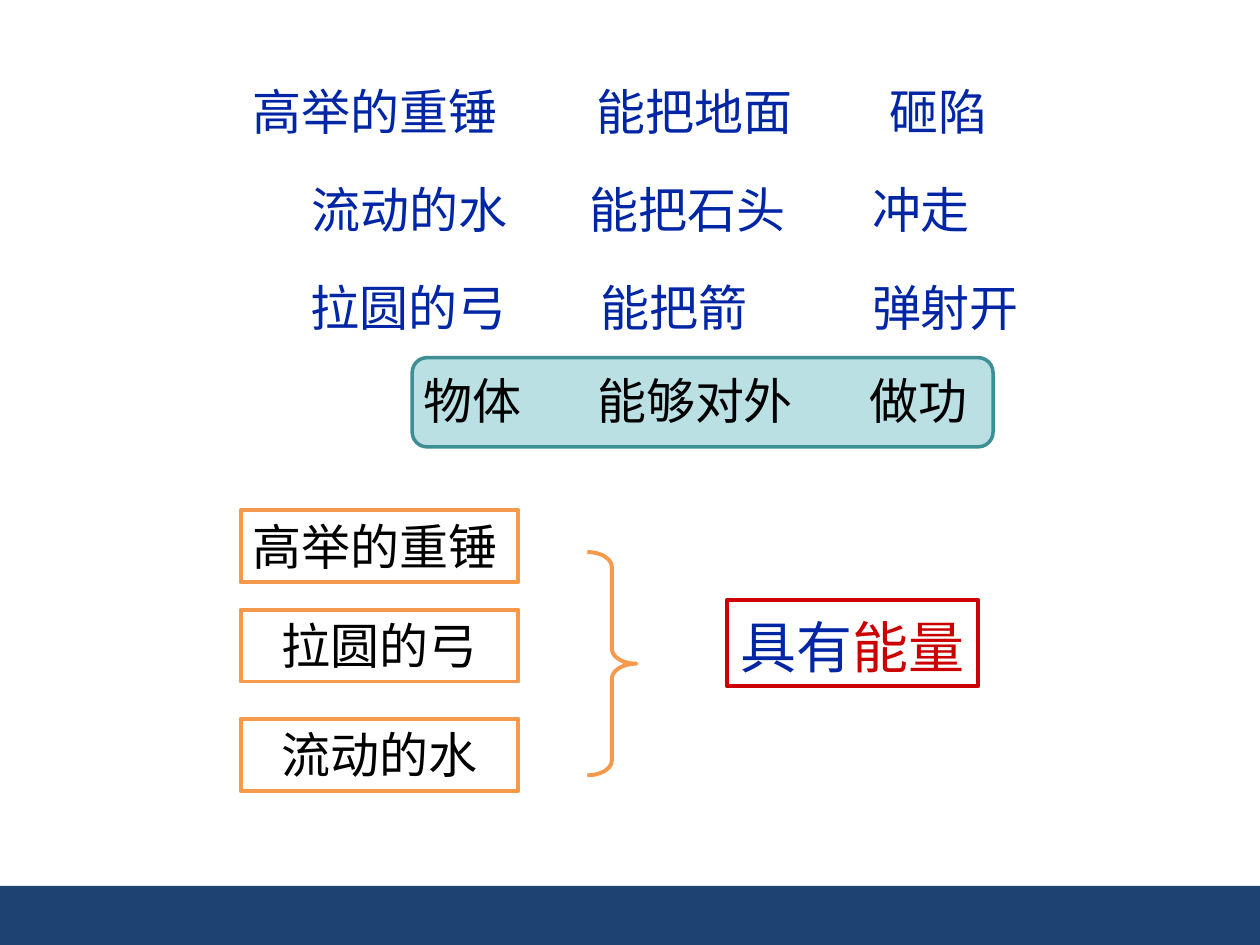
import pptx
import pptx.util
import pptx.dml.color
import pptx.enum.shapes
import pptx.enum.text
import lxml.etree

Cm = pptx.util.Cm
Pt = pptx.util.Pt
KIND = pptx.enum.shapes.MSO_SHAPE
ALIGN = pptx.enum.text.PP_ALIGN
NS = "http://schemas.openxmlformats.org/drawingml/2006/main"
BLUE, RED, ORANGE, BLACK = "0026A5", "CC0000", "F7994B", "000000"
FONT = {"name": "Times New Roman", "size": Pt(28)}
FRAME = {"word_wrap": True, "vertical_anchor": pptx.enum.text.MSO_ANCHOR.TOP}
PAD = 0.25  # inner margin of a text frame, cm


def paint(part, color):
    part.rgb = pptx.dml.color.RGBColor.from_string(color)


def format_all(item, values):
    for name, value in values.items():
        setattr(item, name, value)


def add_form(slide, kind, box, fill=None, line=None, width=2.25):
    form = slide.shapes.add_shape(kind, *map(Cm, box))
    form.shadow.inherit = False
    if fill:
        form.fill.solid()
        paint(form.fill.fore_color, fill)
    else:
        form.fill.background()
    if line:
        paint(form.line.color, line)
        form.line.width = Pt(width)
    else:
        form.line.fill.background()
    return form


def write(form, runs, **para):
    """Write (text, colour) runs as one paragraph with the given format."""
    format_all(form.text_frame, FRAME)
    line = form.text_frame.paragraphs[0]
    format_all(line, para)
    for text, color in runs:
        run = line.add_run()
        run.text = text
        format_all(run.font, FONT)
        paint(run.font.color, color)
    return line


def add_row(slide, box, words, stops, color):
    """Set words in one line, with tab stops at the given slide positions."""
    form = slide.shapes.add_textbox(*map(Cm, box))
    line = write(form, [("\t".join(words), color)])
    tabs = lxml.etree.SubElement(line._p.get_or_add_pPr(), f"{{{NS}}}tabLst")
    for stop in stops:
        pos = Cm(stop - box[0] - PAD)
        lxml.etree.SubElement(tabs, f"{{{NS}}}tab", pos=str(int(pos)), algn="l")


def add_cases(slide, left, top):
    step = 1.97
    rows = [
        (0, ("高举的重锤", "能把地面", "砸陷"), (12.02, 17.94)),
        (1.19, ("流动的水", "能把石头", "冲走"), (11.88, 17.58)),
        (1.17, ("拉圆的弓", "能把箭", "弹射开"), (12.1, 17.58)),
    ]
    for i, (dent, words, stops) in enumerate(rows):
        box = (left + dent, top + i * step, 19 - dent, 1.45)
        add_row(slide, box, words, stops, BLUE)


def add_rule(slide, left, top, width, height):
    add_form(slide, KIND.ROUNDED_RECTANGLE, (left, top, width, height),
             "BBE0E3", "3D8F95", 2)
    add_row(slide, (left - 0.02, top + 0.13, width + 0.28, 1.45),
            ("物体", "能够对外", "做功"), (12.04, 17.53), BLACK)


def add_result(slide, left, top):
    items = [("高举的重锤", 0, ALIGN.LEFT), ("拉圆的弓", 2, ALIGN.CENTER),
             ("流动的水", 4.2, ALIGN.CENTER)]
    for text, drop, align in items:
        form = add_form(slide, KIND.RECTANGLE, (left, top + drop, 5.6, 1.45),
                        line=ORANGE)
        write(form, [(text, BLACK)], alignment=align)

    brace = add_form(slide, KIND.RIGHT_BRACE,
                     (left + 6.99, top + 0.84, 0.99, 4.5), line=ORANGE)
    brace.adjustments[0] = 0.301

    form = add_form(slide, KIND.RECTANGLE,
                    (left + 9.81, top + 1.8, 5.05, 1.75), line=RED)
    line = write(form, [("具有", BLUE), ("能量", RED)],
                 alignment=ALIGN.CENTER, line_spacing=1.1)
    for run in line.runs:
        run.font.size = Pt(32)


def main():
    deck = pptx.Presentation()
    format_all(deck, {"slide_width": Cm(25.4), "slide_height": Cm(19.05)})
    slide = deck.slides.add_slide(deck.slide_layouts[6])
    add_form(slide, KIND.RECTANGLE, (0, 17.86, 25.4, 1.19), "1C4372")
    add_cases(slide, 4.85, 1.52)
    add_rule(slide, 8.31, 7.21, 11.71, 1.8)
    add_result(slide, 4.85, 10.29)
    deck.save("out.pptx")


if __name__ == "__main__":
    main()
